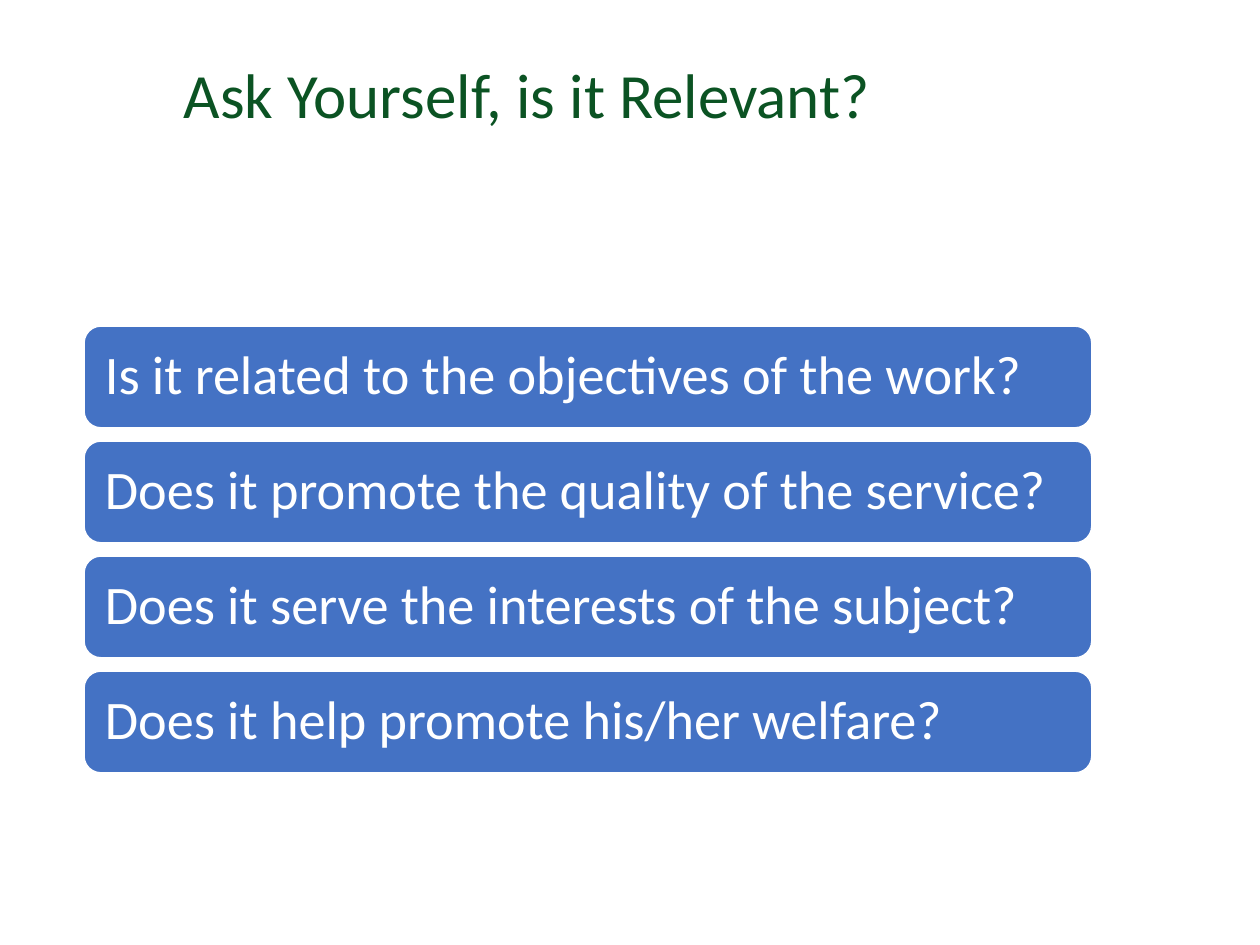
from pptx import Presentation
from pptx.dml.color import RGBColor
from pptx.enum.shapes import MSO_SHAPE
from pptx.enum.text import MSO_ANCHOR, PP_ALIGN
from pptx.util import Pt

EMU_PER_PX = 914400 / 126
FONT = "Calibri"
GREEN = RGBColor(0x0B, 0x53, 0x23)
BLUE = RGBColor(0x44, 0x72, 0xC4)
WHITE = RGBColor(0xFF, 0xFF, 0xFF)

QUESTIONS = [
    "Is it related to the objectives of the work?",
    "Does it promote the quality of the service?",
    "Does it serve the interests of the subject?",
    "Does it help promote his/her welfare?",
]
BAR_LEFT, BAR_TOP, BAR_WIDTH, BAR_HEIGHT = 84, 326, 1008, 102
BAR_STEP = 115
BAR_INSET = 16


def px(length):
    return round(length * EMU_PER_PX)


def write_line(text_frame, text, size, color):
    """Fill a frame with one left-aligned line and return its paragraph."""
    text_frame.text = text
    para = text_frame.paragraphs[0]
    para.alignment = PP_ALIGN.LEFT
    font = para.runs[0].font
    font.name = FONT
    font.size = Pt(size)
    font.color.rgb = color
    return para


def set_title(slide, text):
    title = slide.shapes.title
    title.left, title.top = px(171), px(49)
    title.width, title.height = px(998), px(89)
    title.text_frame.vertical_anchor = MSO_ANCHOR.TOP
    write_line(title.text_frame, text, 36, GREEN)


def add_question_bar(slide, top, question):
    bar = slide.shapes.add_shape(
        MSO_SHAPE.ROUNDED_RECTANGLE,
        px(BAR_LEFT), px(top), px(BAR_WIDTH), px(BAR_HEIGHT))
    bar.shadow.inherit = False
    bar.fill.solid()
    bar.fill.fore_color.rgb = BLUE
    bar.line.color.rgb = WHITE
    bar.line.width = Pt(1)

    frame = bar.text_frame
    frame.word_wrap = True
    frame.vertical_anchor = MSO_ANCHOR.MIDDLE
    frame.margin_left = frame.margin_right = px(BAR_INSET)
    frame.margin_top = frame.margin_bottom = px(BAR_INSET)
    para = write_line(frame, question, 31, WHITE)
    para.line_spacing = 0.9


def main():
    deck = Presentation()
    deck.slide_width, deck.slide_height = px(1260), px(945)
    slide = deck.slides.add_slide(deck.slide_layouts.get_by_name("Title Only"))

    # Heading
    set_title(slide, "Ask Yourself, is it Relevant?")

    # Stack of questions
    for index, question in enumerate(QUESTIONS):
        add_question_bar(slide, BAR_TOP + index * BAR_STEP, question)

    deck.save("out.pptx")


if __name__ == "__main__":
    main()
